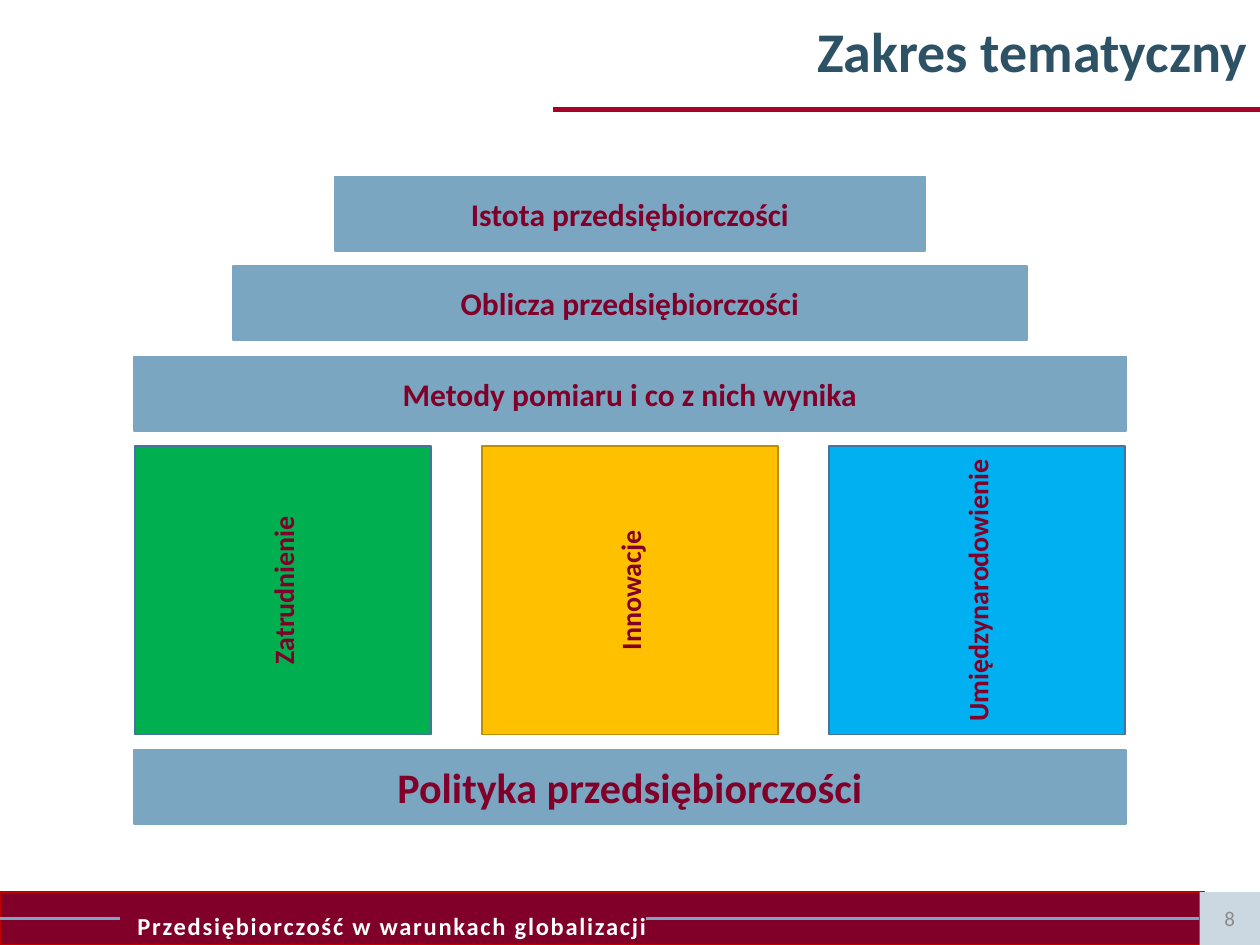
import pptx
import pptx.util
import pptx.dml.color
import pptx.enum.shapes
import pptx.enum.text
from lxml import etree

Inches, Pt = pptx.util.Inches, pptx.util.Pt
RGB = pptx.dml.color.RGBColor.from_string
ALIGN = pptx.enum.text.PP_ALIGN
MIDDLE = pptx.enum.text.MSO_ANCHOR.MIDDLE

THEME = {
    "font": "Calibri",
    "wine": "810029", "red": "A7002B", "edge": "C00000",
    "steel": "7AA6C2", "pale": "CBD8E1", "navy": "2D5265",
    "grey": "8C8C8C", "white": "FFFFFF",
    "green": "00B050", "gold": "FFC000", "sky": "00B0F0",
    "rim": "43739E", "ochre": "BD8E00",
    "title": 32, "base": 24, "bar": 18, "pillar": 16, "foot": 14, "page": 12,
}

deck = pptx.Presentation()
deck.slide_width, deck.slide_height = Inches(10), Inches(7.5)
slide = deck.slides.add_slide(deck.slide_layouts[5])


def write(shape, text, size, color, bold=True, align=ALIGN.CENTER):
    """Fill a shape with one formatted line of text."""
    frame = shape.text_frame
    frame.word_wrap = True
    frame.vertical_anchor = MIDDLE
    frame.text = text
    para = frame.paragraphs[0]
    para.alignment = align
    font = para.runs[0].font
    style = {"name": THEME["font"], "size": Pt(THEME[size]), "bold": bold}
    for key, value in style.items():
        setattr(font, key, value)
    font.color.rgb = RGB(THEME[color])
    return para


def box(left, top, width, height, fill, line=None, weight=1):
    """Add a plain rectangle, without an outline if no line is given."""
    rect = slide.shapes.add_shape(
        pptx.enum.shapes.MSO_SHAPE.RECTANGLE,
        Inches(left), Inches(top), Inches(width), Inches(height))
    rect.shadow.inherit = False
    rect.fill.solid()
    rect.fill.fore_color.rgb = RGB(THEME[fill])
    if line:
        rect.line.color.rgb = RGB(THEME[line])
        rect.line.width = Pt(weight)
    else:
        rect.line.fill.background()
    return rect


# Title
title = slide.shapes.title
place = {"left": 0, "top": 0, "width": 10, "height": 0.86}
for key, value in place.items():
    setattr(title, key, Inches(value))
write(title, "Zakres tematyczny", "title", "navy",
      align=ALIGN.RIGHT).line_spacing = 0.9

# Footer band and page number
band = box(0, 7.08, 9.56, 0.42, "wine", "edge", 0.75)
band.text_frame.margin_left = Inches(1.09)
para = write(band, "Przedsiębiorczość w warunkach globalizacji",
             "foot", "white", align=ALIGN.LEFT)
para.line_spacing = 1.5
para.runs[0]._r.get_or_add_rPr().set("spc", "100")
page = box(9.52, 7.08, 0.48, 0.42, "pale")
write(page, "8", "page", "grey", bold=False)

# Rules under the title and across the footer
rules = [
    (4.39, 10, 0.87, "red", 3, None),
    (0, 0.95, 7.29, "steel", 1.75, None),
    (5.13, 9.52, 7.29, "steel", 1.75, page),
]
for start, end, y, color, weight, goal in rules:
    rule = slide.shapes.add_connector(
        pptx.enum.shapes.MSO_CONNECTOR.STRAIGHT,
        Inches(start), Inches(y), Inches(end), Inches(y))
    rule.line.color.rgb = RGB(THEME[color])
    rule.line.width = Pt(weight)
    etree.SubElement(rule._element.spPr,
                     pptx.oxml.ns.qn("a:effectLst"))
    if goal:
        rule.end_connect(goal, 1)

# Centred bars: the stepped roof and the base
bars = [
    ("Istota przedsiębiorczości", 1.4, 4.68, "bar"),
    ("Oblicza przedsiębiorczości", 2.11, 6.3, "bar"),
    ("Metody pomiaru i co z nich wynika", 2.83, 7.87, "bar"),
    ("Polityka przedsiębiorczości", 5.95, 7.87, "base"),
]
for text, top, width, size in bars:
    bar = box(5 - width / 2, top, width, 0.59, "steel", "steel")
    write(bar, text, size, "wine")

# Pillars, turned so that their text reads upwards
pillars = [
    ("Zatrudnienie", "green", "rim"),
    ("Innowacje", "gold", "ochre"),
    ("Umiędzynarodowienie", "sky", "rim"),
]
for i, (text, fill, line) in enumerate(pillars):
    pillar = box(1.1 + 2.755 * i, 3.51, 2.29, 2.35, fill, line)
    pillar.rotation = 270
    pillar.text_frame.margin_left = Inches(0.05)
    pillar.text_frame.margin_right = Inches(0.05)
    write(pillar, text, "pillar", "wine")

deck.save("out.pptx")
